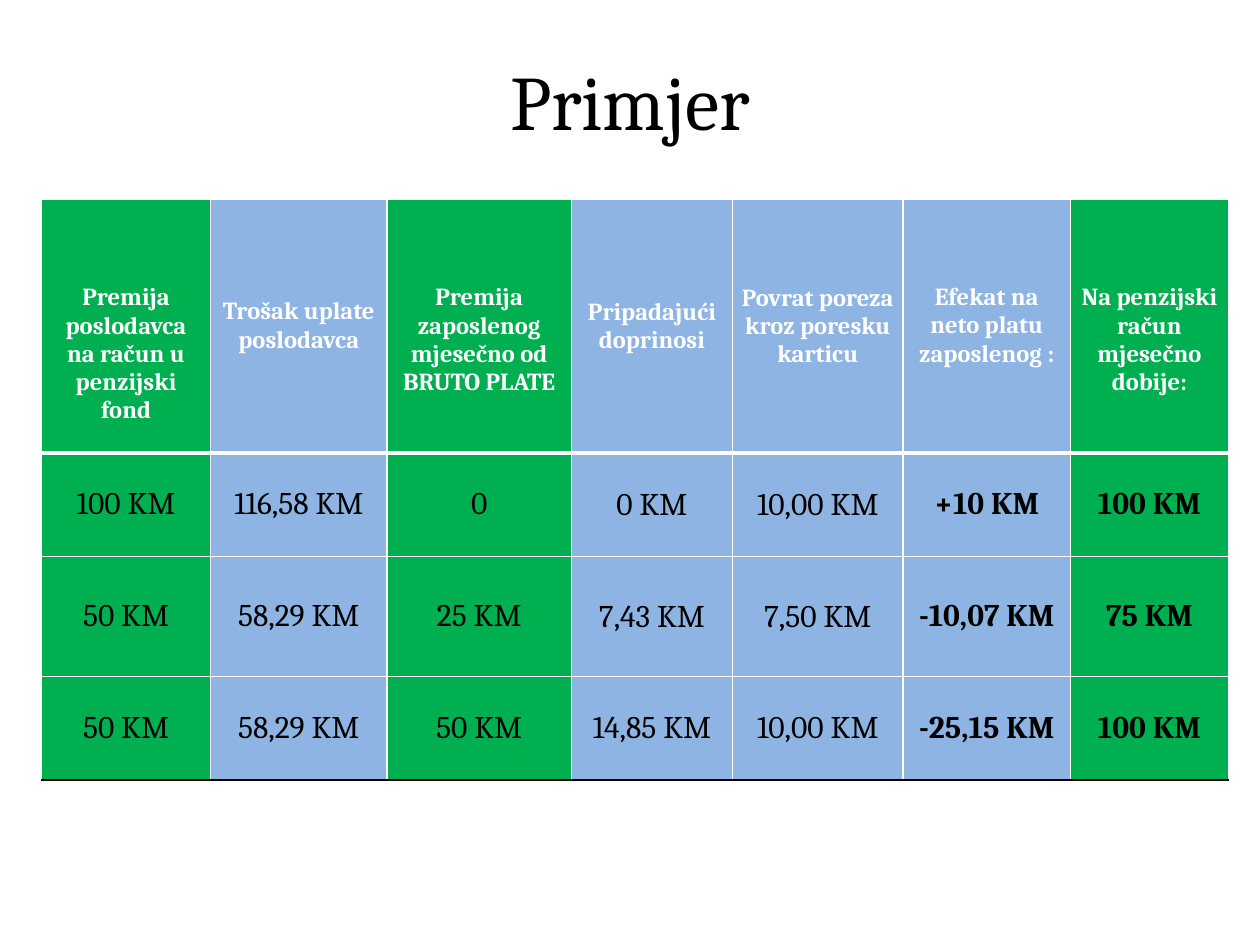
import pptx
import pptx.util
import pptx.dml.color
import pptx.enum.text
import pptx.oxml
import pptx.oxml.ns
from lxml import etree

Inches, Pt = pptx.util.Inches, pptx.util.Pt
RGBColor = pptx.dml.color.RGBColor
ALIGN, ANCHOR = pptx.enum.text.PP_ALIGN, pptx.enum.text.MSO_ANCHOR
qn = pptx.oxml.ns.qn

GREEN = RGBColor(0x00, 0xB0, 0x50)
BLUE = RGBColor(0x8E, 0xB4, 0xE3)
WHITE = RGBColor(0xFF, 0xFF, 0xFF)
BLACK = RGBColor(0x00, 0x00, 0x00)
FONT = "Cambria"

HEADER_LINE = 0.225  # inches per line of 14 pt text
GREEN_COLS = (0, 2, 6)
TIGHT_COLS = (3, 4)
BOLD_COLS = (5, 6)
LINES_LOWERED = {0: 2, 2: 1, 6: 1}  # header text starts this many lines lower
COL_WIDTHS = (1.34, 1.4, 1.46, 1.28, 1.35, 1.33, 1.25)
ROW_HEIGHTS = (2.01, 0.82, 0.95, 0.82)
ROWS = (
    ("Premija poslodavca na račun u penzijski fond",
     "Trošak uplate poslodavca",
     "Premija zaposlenog\nmjesečno od BRUTO PLATE",
     "Pripadajući doprinosi",
     "Povrat poreza kroz poresku karticu",
     "Efekat na neto platu zaposlenog :",
     "Na penzijski račun mjesečno dobije:"),
    ("100 KM", "116,58 KM", "0", "0 KM", "10,00 KM", "+10 KM", "100 KM"),
    ("50 KM", "58,29 KM", "25 KM", "7,43 KM", "7,50 KM", "-10,07 KM", "75 KM"),
    ("50 KM", "58,29 KM", "50 KM", "14,85 KM", "10,00 KM", "-25,15 KM", "100 KM"),
)


def add_title(s, left, top, width, height):
    title = s.shapes.title
    title.left, title.top, title.width, title.height = left, top, width, height
    tf = title.text_frame
    tf.text = "Primjer"
    tf.vertical_anchor = ANCHOR.MIDDLE
    p = tf.paragraphs[0]
    p.alignment = ALIGN.CENTER
    p.font.size, p.font.name, p.font.color.rgb = Pt(44), FONT, BLACK


def set_borders(cell, row):
    """Draw white cell borders, thick under the header and black under the last row."""
    last = len(ROWS) - 1
    borders = {
        "a:lnL": (1, WHITE),
        "a:lnR": (1, WHITE),
        "a:lnT": (3 if row == 1 else 1, WHITE),
        "a:lnB": (3 if row == 0 else 1, BLACK if row == last else WHITE),
    }
    tcPr = cell._tc.get_or_add_tcPr()
    for i, (tag, (width, color)) in enumerate(borders.items()):
        ln = etree.Element(qn(tag), w=str(Pt(width)))
        fill = etree.SubElement(ln, qn("a:solidFill"))
        etree.SubElement(fill, qn("a:srgbClr"), val=str(color))
        tcPr.insert(i, ln)


def format_cell(cell, row, col):
    header = row == 0
    cell.fill.solid()
    cell.fill.fore_color.rgb = GREEN if col in GREEN_COLS else BLUE
    set_borders(cell, row)
    tight = col in TIGHT_COLS
    cell.vertical_anchor = ANCHOR.MIDDLE
    cell.margin_left = cell.margin_right = Inches(0.01 if tight else 0.07)
    lowered = LINES_LOWERED.get(col, 0) if header else 0
    cell.margin_top = Inches((0.01 if tight else 0) + lowered * HEADER_LINE)
    cell.margin_bottom = 0
    for p in cell.text_frame.paragraphs:
        p.alignment = ALIGN.CENTER
        p.font.name = FONT
        p.font.size = Pt(14 if header else 18)
        p.font.bold = header or col in BOLD_COLS
        p.font.color.rgb = WHITE if header else BLACK


def add_premium_table(s, left, top, width, height):
    table = s.shapes.add_table(len(ROWS), len(COL_WIDTHS), left, top, width, height).table
    for column, share in zip(table.columns, COL_WIDTHS):
        column.width = int(width * share / sum(COL_WIDTHS))
    for table_row, share in zip(table.rows, ROW_HEIGHTS):
        table_row.height = int(height * share / sum(ROW_HEIGHTS))
    for row, texts in enumerate(ROWS):
        for col, text in enumerate(texts):
            cell = table.cell(row, col)
            cell.text = text
            format_cell(cell, row, col)


def main():
    prs = pptx.Presentation()
    prs.slide_width, prs.slide_height = Inches(10), Inches(7.5)
    s = prs.slides.add_slide(prs.slide_layouts[5])
    add_title(s, Inches(0.5), Inches(0.17), Inches(9), Inches(1.25))
    add_premium_table(s, Inches(0.33), Inches(1.58), Inches(9.42), Inches(4.61))
    prs.save("out.pptx")


if __name__ == "__main__":
    main()
